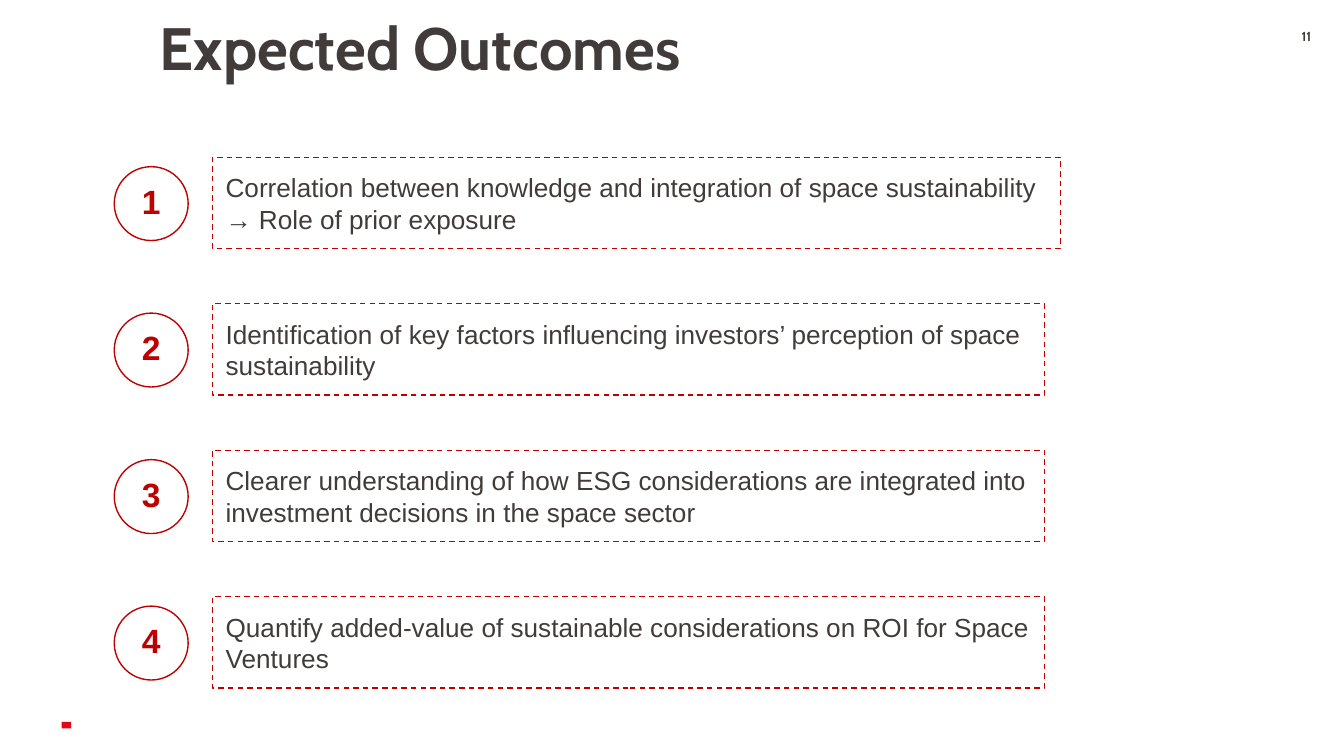
from pptx import Presentation
from pptx.dml.color import RGBColor
from pptx.enum.dml import MSO_LINE
from pptx.enum.shapes import MSO_SHAPE
from pptx.enum.text import MSO_ANCHOR, PP_ALIGN
from pptx.util import Inches, Pt

INK = "413C3A"
RED = "C00000"
ACCENT = "E30613"

ROW_LEFT, FIRST_ROW_TOP, ROW_PITCH, ROW_HEIGHT = 0.85, 1.17, 1.09, 0.68
# Each outcome with the right edge of its box
OUTCOMES = [
    ("Correlation between knowledge and integration of space sustainability"
     "\v→ Role of prior exposure", 7.89),
    ("Identification of key factors influencing investors’ perception of space "
     "sustainability", 7.77),
    ("Clearer understanding of how ESG considerations are integrated into "
     "investment decisions in the space sector", 7.77),
    ("Quantify added-value of sustainable considerations on ROI for Space "
     "Ventures", 7.77),
]


def color(hex_string):
    return RGBColor.from_string(hex_string)


def write(shape, text, size, font="Arial", fill=INK, bold=False, align=PP_ALIGN.LEFT,
          anchor=MSO_ANCHOR.TOP, insets=(0.1, 0.1, 0.1, 0.1), line_spacing=None):
    """Fill a shape with one paragraph; insets run left, top, right, bottom."""
    frame = shape.text_frame
    frame.word_wrap = True
    frame.vertical_anchor = anchor
    (frame.margin_left, frame.margin_top,
     frame.margin_right, frame.margin_bottom) = map(Inches, insets)
    frame.text = text
    paragraph = frame.paragraphs[0]
    paragraph.alignment = align
    paragraph.line_spacing = line_spacing
    paragraph.font.name = font
    paragraph.font.size = Pt(size)
    paragraph.font.bold = bold
    paragraph.font.color.rgb = color(fill)


def add_text(shapes, box, text, size, **style):
    write(shapes.add_textbox(*map(Inches, box)), text, size, **style)


def add_outline(shapes, kind, box):
    shape = shapes.add_shape(kind, *map(Inches, box))
    shape.shadow.inherit = False
    shape.fill.background()
    shape.line.color.rgb = color(RED)
    shape.line.width = Pt(0.75)
    return shape


def add_header(slide):
    add_text(slide.shapes, (9.44, 0.21, 0.56, 0.18), "11", 7, font="Cabin", bold=True,
             align=PP_ALIGN.CENTER, insets=(0.1, 0, 0.1, 0))
    add_text(slide.shapes, (0.99, 0.14, 5.86, 1.17), "Expected Outcomes", 32,
             font="Cabin", bold=True, insets=(0.2, 0, 0.08, 0.05), line_spacing=0.9)


def add_footer_mark(slide):
    mark = slide.shapes.add_shape(
        MSO_SHAPE.RECTANGLE, *map(Inches, (0.47, 5.36, 0.05, 0.07)))
    mark.rotation = 270
    mark.shadow.inherit = False
    mark.fill.solid()
    mark.fill.fore_color.rgb = color(ACCENT)
    mark.line.fill.background()


def add_outcome(slide, left, top, width, height, number, text):
    """Place a circled number with its dashed box to the right."""
    shapes = slide.shapes.add_group_shape().shapes
    circle_size, box_offset = 0.55, 0.73
    frame = add_outline(shapes, MSO_SHAPE.RECTANGLE,
                        (left + box_offset, top, width - box_offset, height))
    frame.line.dash_style = MSO_LINE.DASH
    write(frame, text, 14, anchor=MSO_ANCHOR.MIDDLE)
    add_text(shapes, (left, top + 0.11, circle_size, 0.47), str(number), 18, fill=RED,
             bold=True, align=PP_ALIGN.CENTER, line_spacing=0.9)
    add_outline(shapes, MSO_SHAPE.OVAL, (left, top + 0.07, circle_size, circle_size))


def main():
    presentation = Presentation()
    presentation.slide_width = Inches(10)
    presentation.slide_height = Inches(10 * 9 / 16)
    slide = presentation.slides.add_slide(presentation.slide_layouts[6])

    add_footer_mark(slide)
    add_header(slide)
    for index, (text, right) in enumerate(OUTCOMES):
        add_outcome(slide, ROW_LEFT, FIRST_ROW_TOP + index * ROW_PITCH,
                    right - ROW_LEFT, ROW_HEIGHT, index + 1, text)

    presentation.save("out.pptx")


if __name__ == "__main__":
    main()
